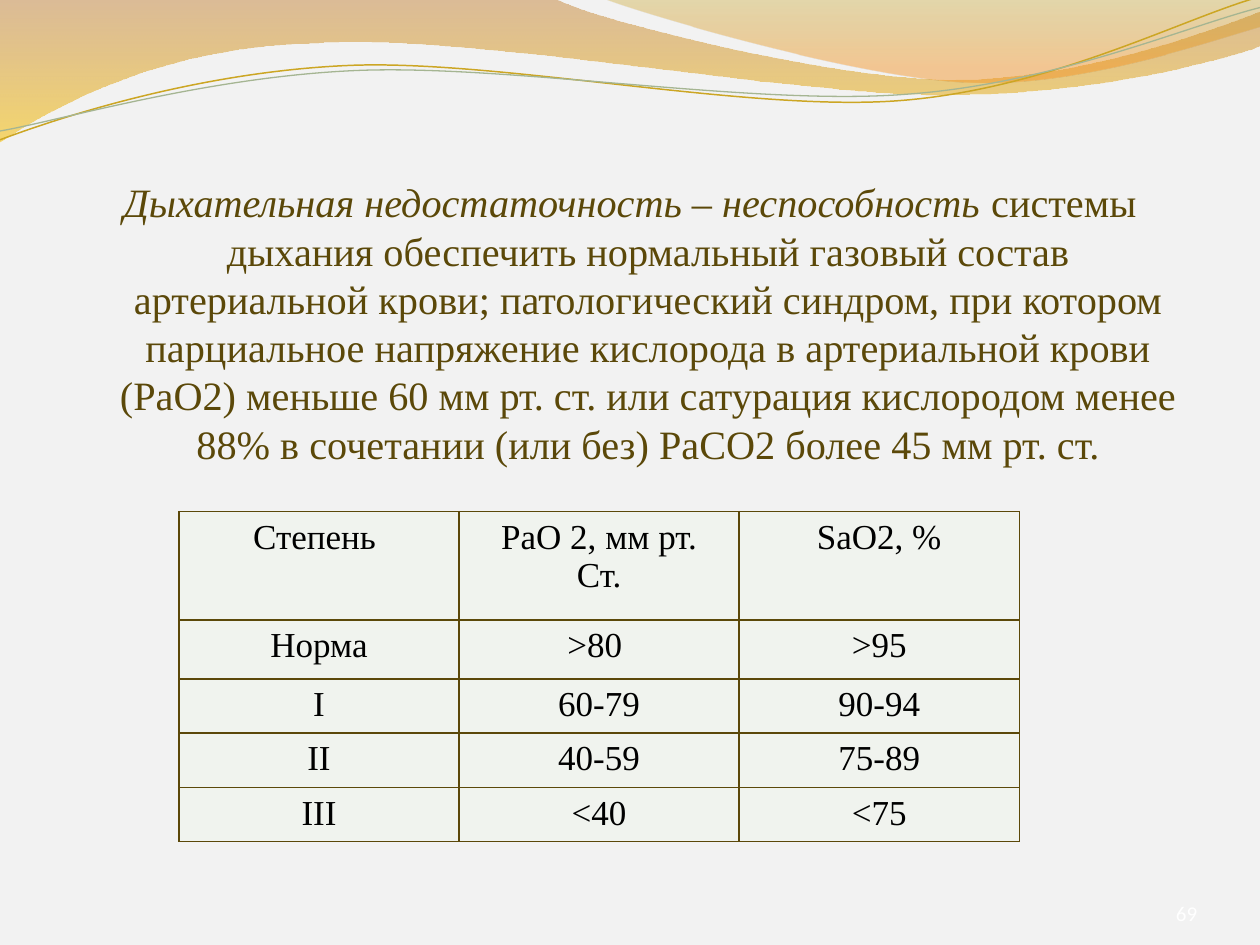
"""Builds a slide on respiratory failure: a definition above a table of degrees."""
from dataclasses import dataclass
from typing import Any

from lxml import etree
from pptx import Presentation, util as u
from pptx.dml.color import RGBColor
from pptx.enum import text
from pptx.oxml import ns

COLORS = {
    "background": "F2F2F2", "brown": "5B4809", "cell": "F0F3EE", "black": "000000",
    "white": "FFFFFF", "copper": "C07A28", "yellow": "F7BF00", "olive": "C09709",
    "orange": "F59320", "gold": "CCA624", "sage": "A5B592",
}
UNITS = 1000

BANDS = [
    ((0, 0),
     [[(4.4, -0.01)],
      [(4.76, 0.17), (6.64, 0.63), (7.58, 0.63)], [(8.53, 0.63), (9.58, 0.26), (10, 0.09)],
      [(10.01, 0.36)],
      [(9.83, 0.44), (8.7, 0.76), (7.46, 0.75)], [(6.22, 0.75), (3.82, 0.28), (2.57, 0.34)],
      [(1.29, 0.36), (0.46, 0.83), (-0.01, 1.13)], [(0, 0)]],
     [("copper", 0, 45), ("yellow", 1, 55)]),
    ((4.79, -0.01),
     [[(5.09, 0.11), (6.82, 0.62), (7.69, 0.65)], [(8.56, 0.69), (9.61, 0.32), (10, 0.21)],
      [(10, 0)], [(4.79, -0.01)]],
     [("olive", 0, 30), ("orange", 0.8, 45)]),
]
WAVES = [
    ((0, 1.11),
     [[(0.48, 0.93), (1.58, 0.57), (2.77, 0.52)], [(3.95, 0.47), (5.93, 0.89), (7.13, 0.8)],
      [(8.33, 0.71), (9.38, 0.15), (9.98, -0.02)]], "gold", 0.85),
    ((0, 1.04),
     [[(0.47, 0.96), (1.64, 0.61), (2.83, 0.56)], [(4.03, 0.51), (5.97, 0.84), (7.17, 0.75)],
      [(8.36, 0.67), (9.41, 0.21), (10, 0.06)]], "sage", 0.75),
]
DEFINITION = [
    ("Дыхательная недостаточность – неспособность ", True),
    ("системы дыхания обеспечить нормальный газовый состав артериальной крови; "
     "патологический синдром, при котором парциальное напряжение кислорода в артериальной "
     "крови (РаО2) меньше 60 мм рт. ст. или сатурация кислородом менее 88% в сочетании "
     "(или без) РаСО2 более 45 мм рт. ст.", False),
]
DEGREES = [
    ("Степень ", "РаО 2, мм рт.\nСт.", "SаО2, %"),
    ("Норма", ">80 ", ">95"),
    ("I", "60-79", "90-94"),
    ("II", "40-59", "75-89"),
    ("III", "<40", "<75"),
]


def rgb(name):
    """Return the named colour."""
    return RGBColor.from_string(COLORS[name])


def units(point):
    """Return a point given in inches in drawing units."""
    return tuple(round(value * UNITS) for value in point)


@dataclass
class SlideBuilder:
    """Holds the text style and the current slide."""
    page: Any
    font: str = "Times New Roman"

    def style(self, paragraph, size, color, align=text.PP_ALIGN.CENTER, font=None):
        """Set a paragraph's font and alignment."""
        paragraph.alignment = align
        paragraph.font.name = font or self.font
        paragraph.font.size = u.Pt(size)
        paragraph.font.color.rgb = rgb(color)

    def outline(self, start, segments, close):
        """Draw an outline of lines and cubic curves without shadow."""
        pen = self.page.shapes.build_freeform(*units(start), scale=u.Inches(1) / UNITS)
        pen.add_line_segments([units(segment[-1]) for segment in segments], close=close)
        shape = pen.convert_to_shape()
        shape.shadow.inherit = False
        sides = list(shape._element.iter(ns.qn("a:lnTo")))
        for side, segment in zip(sides, segments):
            if len(segment) == 3:
                curve = etree.Element(ns.qn("a:cubicBezTo"))
                for x, y in map(units, segment):
                    etree.SubElement(curve, ns.qn("a:pt"), x=str(x - pen.shape_offset_x),
                                     y=str(y - pen.shape_offset_y))
                side.getparent().replace(side, curve)
        return shape

    def band(self, start, segments, stops):
        """Draw a translucent band with a gradient from top to bottom."""
        shape = self.outline(start, segments, True)
        shape.line.fill.background()
        shape.fill.gradient()
        shape.fill.gradient_angle = 270
        for stop, (color, position, _) in zip(shape.fill.gradient_stops, stops):
            stop.color.rgb = rgb(color)
            stop.position = position
        fill = shape._element.spPr.find(ns.qn("a:gradFill"))
        for node, (_, _, opacity) in zip(fill.iter(ns.qn("a:srgbClr")), stops):
            etree.SubElement(node, ns.qn("a:alpha"), val=str(opacity * 1000))

    def wave(self, start, segments, color, width):
        """Draw a thin wavy line."""
        shape = self.outline(start, segments, False)
        shape.fill.background()
        shape.line.color.rgb = rgb(color)
        shape.line.width = u.Pt(width)

    def body(self, spans, left, top, width, height):
        """Fill the body placeholder with one centred paragraph."""
        box = self.page.placeholders[1]
        box.left, box.top, box.width, box.height = map(u.Inches, (left, top, width, height))
        box.text_frame.auto_size = text.MSO_AUTO_SIZE.NONE
        para = box.text_frame.paragraphs[0]
        self.style(para, 23, "brown")
        para.space_before = u.Pt(0)
        properties = para._p.get_or_add_pPr()
        properties.set("marL", str(u.Inches(0.3)))
        properties.set("indent", str(u.Inches(-0.3)))
        properties.insert_element_before(properties.makeelement(ns.qn("a:buNone")),
                                         "a:tabLst", "a:defRPr", "a:extLst")
        for words, italic in spans:
            span = para.add_run()
            span.text = words
            span.font.italic = italic

    def borders(self, cell, color, width):
        """Draw a line on each side of a cell."""
        properties = cell._tc.get_or_add_tcPr()
        for index, side in enumerate("LRTB"):
            line = etree.Element(ns.qn(f"a:ln{side}"), w=str(u.Pt(width)))
            fill = etree.SubElement(line, ns.qn("a:solidFill"))
            etree.SubElement(fill, ns.qn("a:srgbClr"), val=COLORS[color])
            properties.insert(index, line)

    def table(self, rows, left, top, width, heights):
        """Add a table with equal columns."""
        frame = self.page.shapes.add_table(len(rows), len(rows[0]), u.Inches(left), u.Inches(top),
                                           u.Inches(width), u.Inches(sum(heights)))
        for row, height, words in zip(frame.table.rows, heights, rows):
            row.height = u.Inches(height)
            for cell, value in zip(row.cells, words):
                cell.text = value
                cell.fill.solid()
                cell.fill.fore_color.rgb = rgb("cell")
                self.borders(cell, "brown", 1)
                for para in cell.text_frame.paragraphs:
                    self.style(para, 20, "black")

    def number(self, value, left, top, width, height):
        """Add the page number."""
        box = self.page.shapes.add_textbox(*map(u.Inches, (left, top, width, height)))
        box.text_frame.word_wrap = True
        box.text_frame.vertical_anchor = text.MSO_ANCHOR.MIDDLE
        box.text_frame.text = value
        self.style(box.text_frame.paragraphs[0], 12, "white", text.PP_ALIGN.RIGHT, "Calibri")


def main():
    """Build and save the deck."""
    deck = Presentation()
    deck.slide_width, deck.slide_height = u.Inches(10), u.Inches(7.5)
    page = deck.slides.add_slide(deck.slide_layouts[1])
    page.background.fill.solid()
    page.background.fill.fore_color.rgb = rgb("background")
    title = page.shapes.title._element
    title.getparent().remove(title)

    builder = SlideBuilder(page)
    for band in BANDS:
        builder.band(*band)
    for wave in WAVES:
        builder.wave(*wave)
    builder.body(DEFINITION, 0.5, 1.36, 9, 2.58)
    builder.table(DEGREES, 1.42, 4.06, 6.67, [0.86, 0.47] + [0.43] * 3)
    builder.number("69", 8.6, 7.05, 1, 0.4)
    deck.save("out.pptx")


if __name__ == "__main__":
    main()
